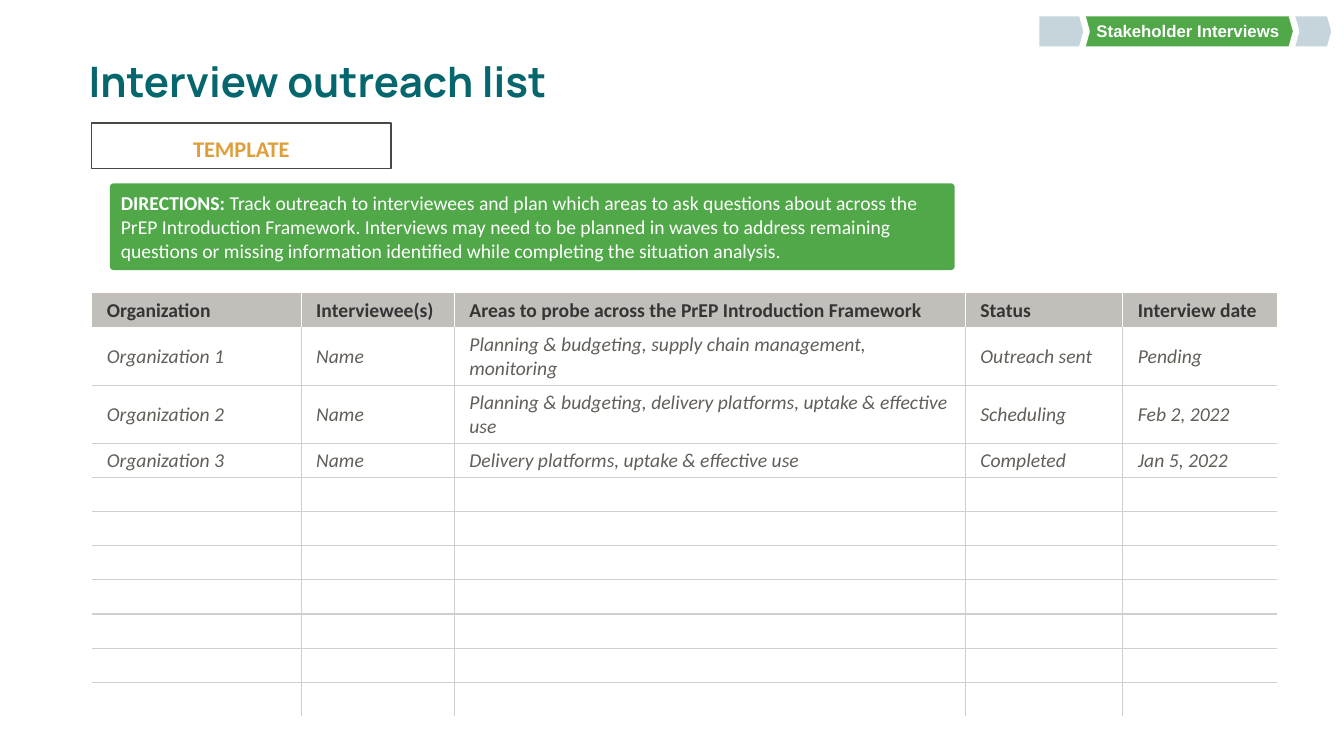
import pptx
import pptx.util
import pptx.dml.color
import pptx.enum.shapes
import pptx.enum.text
from pptx.oxml.ns import qn
from lxml import etree

Pt = pptx.util.Pt
SHAPES = pptx.enum.shapes.MSO_SHAPE
ALIGN = pptx.enum.text.PP_ALIGN
ANCHOR = pptx.enum.text.MSO_ANCHOR

# Content
TITLE = "Interview outreach list"
TAG = "TEMPLATE"
DIRECTIONS = (
    "DIRECTIONS: ",
    "Track outreach to interviewees and plan which areas to ask questions about across "
    "the PrEP Introduction Framework. Interviews may need to be planned in waves to "
    "address remaining questions or missing information identified while completing the "
    "situation analysis.",
)
SECTION = "Stakeholder Interviews"
HEADERS = ["Organization", "Interviewee(s)",
           "Areas to probe across the PrEP Introduction Framework",
           "Status", "Interview date"]
INTERVIEWS = [
    ["Organization 1", "Name", "Planning & budgeting, supply chain management, monitoring",
     "Outreach sent", "Pending"],
    ["Organization 2", "Name",
     "Planning & budgeting, delivery platforms, uptake & effective use",
     "Scheduling", "Feb 2, 2022"],
    ["Organization 3", "Name", "Delivery platforms, uptake & effective use",
     "Completed", "Jan 5, 2022"],
]
EMPTY_ROWS = 7

# Layout and colours
COLUMN_WIDTHS = [149.6, 109.4, 365, 112.6, 110.2]
ROW_HEIGHT, TALL_ROW_HEIGHT = 24.4, 41.4
TALL_ROWS = (1, 2)
WHITE, GREEN, PALE_BLUE = "FFFFFF", "50A849", "C6D5DB"
HEADER_FILL, GRID = "C2BFBB", "D0CECE"


def color(value):
    return pptx.dml.color.RGBColor.from_string(value)


def style(run, size, font, value, bold=False, italic=False):
    run.font.size, run.font.name = Pt(size), font
    run.font.bold, run.font.italic = bold, italic
    run.font.color.rgb = color(value)


def set_margins(target, left, top, right, bottom):
    target.margin_left, target.margin_top = Pt(left), Pt(top)
    target.margin_right, target.margin_bottom = Pt(right), Pt(bottom)


def add_box(kind, left, top, width, height, fill, line=None, line_width=1, adjustment=None):
    shape = slide.shapes.add_shape(kind, Pt(left), Pt(top), Pt(width), Pt(height))
    shape.shadow.inherit = False
    shape.fill.solid()
    shape.fill.fore_color.rgb = color(fill)
    if line:
        shape.line.color.rgb = color(line)
        shape.line.width = Pt(line_width)
    else:
        shape.line.fill.background()
    if adjustment is not None:
        shape.adjustments[0] = adjustment
    return shape


def add_border(cell, side, value):
    line = etree.SubElement(cell._tc.get_or_add_tcPr(), qn("a:ln" + side))
    if value is None:
        line.set("w", "0")
        etree.SubElement(line, qn("a:noFill"))
    else:
        line.set("w", str(Pt(1)))
        fill = etree.SubElement(line, qn("a:solidFill"))
        etree.SubElement(fill, qn("a:srgbClr")).set("val", value)


presentation = pptx.Presentation()
presentation.slide_width, presentation.slide_height = Pt(960), Pt(540)
slide = presentation.slides.add_slide(presentation.slide_layouts[6])

# Title
title = slide.shapes.add_textbox(Pt(0), Pt(15.1), Pt(828), Pt(90))
frame = title.text_frame
frame.word_wrap = True
frame.vertical_anchor = ANCHOR.MIDDLE
set_margins(frame, 63.4, 3.6, 7.2, 3.6)
frame.text = TITLE
frame.paragraphs[0].line_spacing = 0.9
style(frame.paragraphs[0].runs[0], 30, "Manrope", "05676D", bold=True)

# Outreach table
rows = [HEADERS] + INTERVIEWS + [[""] * len(HEADERS)] * EMPTY_ROWS
heights = [TALL_ROW_HEIGHT if i in TALL_ROWS else ROW_HEIGHT for i in range(len(rows))]
table = slide.shapes.add_table(len(rows), len(HEADERS), Pt(65.5), Pt(209.5),
                               Pt(sum(COLUMN_WIDTHS)), Pt(sum(heights))).table
table.first_row = table.horz_banding = False
table._tbl.tblPr.find(qn("a:tableStyleId")).text = "{2D5ABB26-0587-4C30-8999-92F81FD0307C}"
for column, width in zip(table.columns, COLUMN_WIDTHS):
    column.width = Pt(width)
last_row, last_column = len(rows) - 1, len(HEADERS) - 1
for i, row in enumerate(rows):
    table.rows[i].height = Pt(heights[i])
    header = i == 0
    vertical = WHITE if header else GRID
    for j, text in enumerate(row):
        cell = table.cell(i, j)
        # Only inner grid lines are drawn, none under the header
        add_border(cell, "L", vertical if j > 0 else None)
        add_border(cell, "R", vertical if j < last_column else None)
        add_border(cell, "T", GRID if i > 1 else None)
        add_border(cell, "B", GRID if 0 < i < last_row else None)
        cell.fill.solid()
        cell.fill.fore_color.rgb = color(HEADER_FILL if header else WHITE)
        cell.vertical_anchor = ANCHOR.MIDDLE
        set_margins(cell, 10.8, 3.6, 10.8, 3.6)
        paragraph = cell.text_frame.paragraphs[0]
        if text:
            paragraph.text = text
            style(paragraph.runs[0], 14, "Calibri", "353535" if header else "625E58",
                  bold=header, italic=not header)
        else:
            end = etree.SubElement(paragraph._p, qn("a:endParaRPr"), sz="1400")
            etree.SubElement(end, qn("a:latin")).set("typeface", "Calibri")

# Directions
directions = add_box(SHAPES.ROUNDED_RECTANGLE, 78.5, 131, 603.4, 61.9, GREEN, adjustment=0.042)
frame = directions.text_frame
frame.word_wrap = True
frame.vertical_anchor = ANCHOR.MIDDLE
paragraph = frame.paragraphs[0]
paragraph.alignment = ALIGN.LEFT
for text, bold in zip(DIRECTIONS, (True, False)):
    run = paragraph.add_run()
    run.text = text
    style(run, 14, "Calibri", WHITE, bold=bold)

# Template tag
tag = add_box(SHAPES.RECTANGLE, 65.5, 87.8, 213.8, 32.4, WHITE, "4A4642")
frame = tag.text_frame
frame.word_wrap = False
frame.vertical_anchor = ANCHOR.TOP
set_margins(frame, 7.2, 5.8, 7.2, 0)
frame.text = TAG
frame.paragraphs[0].alignment = ALIGN.CENTER
frame.paragraphs[0].line_spacing = 1.15
style(frame.paragraphs[0].runs[0], 16, "Calibri", "DE9F3B", bold=True)

# Section tracker, right to left so each step overlaps the next
for left, width, fill, label in [(917.3, 36, PALE_BLUE, ""),
                                 (769.7, 156.2, GREEN, SECTION),
                                 (740.2, 36, PALE_BLUE, "")]:
    step = add_box(SHAPES.PENTAGON, left, 9.4, width, 25.9, fill, WHITE, 4.5, 0.138)
    if label:
        frame = step.text_frame
        frame.word_wrap = True
        frame.vertical_anchor = ANCHOR.MIDDLE
        set_margins(frame, 10.5, 3.6, 7.2, 3.6)
        frame.text = label
        frame.paragraphs[0].alignment = ALIGN.CENTER
        style(frame.paragraphs[0].runs[0], 12, "Arial", WHITE, bold=True)

presentation.save("out.pptx")
